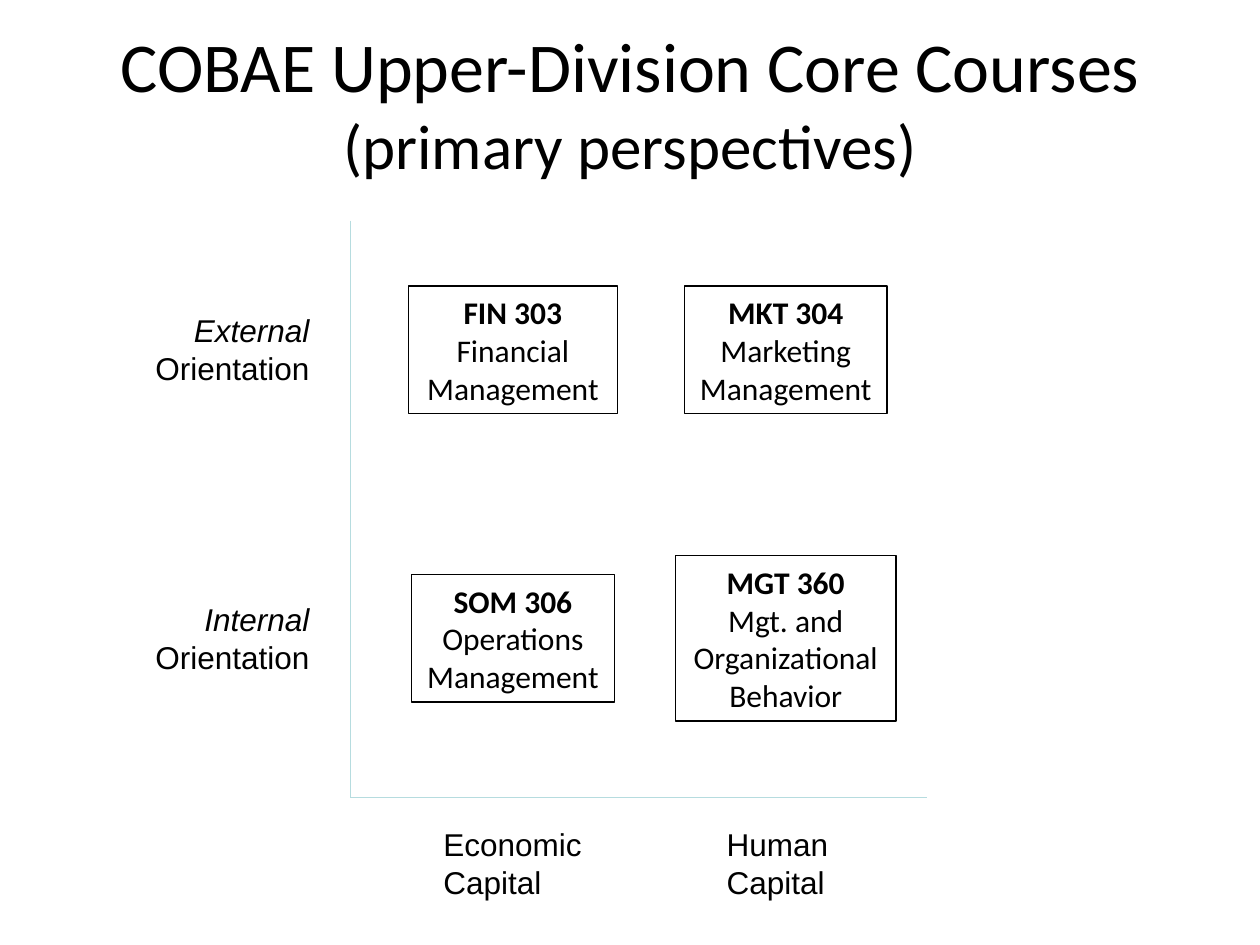
import pptx
import pptx.util
import pptx.dml.color
import pptx.enum.shapes
import pptx.enum.text
import pptx.oxml

Cm, Pt = pptx.util.Cm, pptx.util.Pt
Align = pptx.enum.text.PP_ALIGN
Anchor = pptx.enum.text.MSO_ANCHOR
Fit = pptx.enum.text.MSO_AUTO_SIZE
BLACK = pptx.dml.color.RGBColor(0, 0, 0)
TEAL = pptx.dml.color.RGBColor(0xB6, 0xDC, 0xDF)


def style(item, form):
    for key, value in form.items():
        setattr(item, key, value)


def write(shape, lines, face, align, anchor, first):
    """Fill a shape with lines; the first one takes the extra format."""
    frame = shape.text_frame
    style(frame, {"word_wrap": False, "auto_size": Fit.SHAPE_TO_FIT_TEXT,
                  "vertical_anchor": anchor})
    frame.text = "\n".join(lines)
    for num, para in enumerate(frame.paragraphs):
        para.alignment = align
        font = para.runs[0].font
        style(font, {"name": face, "size": Pt(18)})
        font.color.rgb = BLACK
        if num == 0:
            style(font, first)


deck = pptx.Presentation()
style(deck, {"slide_width": Cm(25.4), "slide_height": Cm(19.05)})
slide = deck.slides.add_slide(deck.slide_layouts[5])
shapes = slide.shapes

# Title
title = shapes.title
style(title, {"left": Cm(1.27), "top": Cm(0.76),
              "width": Cm(22.86), "height": Cm(2.62)})
style(title.text_frame, {"word_wrap": True, "auto_size": Fit.NONE,
                         "vertical_anchor": Anchor.MIDDLE})
para = title.text_frame.paragraphs[0]
para.alignment = Align.CENTER
for num, (text, size) in enumerate([("COBAE Upper-Division Core Courses", 40),
                                    ("(primary perspectives)", 36)]):
    if num:
        para.add_line_break()
    run = para.add_run()
    run.text = text
    style(run.font, {"name": "Calibri", "size": Pt(size)})
    run.font.color.rgb = BLACK

# Axes, both from the shared corner
left, base = Cm(7.06), Cm(16.08)
for ends in [(left, Cm(4.45), left, base), (left, base, Cm(18.69), base)]:
    axis = shapes.add_connector(pptx.enum.shapes.MSO_CONNECTOR.STRAIGHT, *ends)
    axis.line.color.rgb = TEAL
    axis.line.width = Pt(0.75)
    axis._element.spPr.append(pptx.oxml.parse_xml(
        '<a:effectLst xmlns:a="http://schemas.openxmlformats.org/drawingml/2006/main"/>'))

# Axis labels
cols = Cm(10.34), Cm(15.84)
rows = Cm(7.05), Cm(12.87)
tall = Cm(1.8)
for x, wide, word in [(8.69, 3.33, "Economic"), (14.4, 2.59, "Human")]:
    label = shapes.add_textbox(Cm(x), Cm(16.51), Cm(wide), tall)
    write(label, [word, "Capital"], "Arial", Align.LEFT, Anchor.TOP, {})
for y, word in zip(rows, ["External", "Internal"]):
    label = shapes.add_textbox(Cm(2.83), y - tall // 2, Cm(3.66), tall)
    write(label, [word, "Orientation"], "Arial", Align.RIGHT, Anchor.TOP,
          {"italic": True})

# Course boxes, centred on the grid
courses = [
    (0, 0, 4.22, 2.57, ["FIN 303", "Financial", "Management"]),
    (0, 1, 4.09, 2.57, ["SOM 306", "Operations", "Management"]),
    (1, 0, 4.09, 2.57, ["MKT 304", "Marketing", "Management"]),
    (1, 1, 4.45, 3.33, ["MGT 360", "Mgt. and", "Organizational", "Behavior"]),
]
for col, row, wide, high, lines in courses:
    wide, high = Cm(wide), Cm(high)
    box = shapes.add_shape(pptx.enum.shapes.MSO_SHAPE.RECTANGLE,
                           cols[col] - wide // 2, rows[row] - high // 2, wide, high)
    box.shadow.inherit = False
    box.fill.background()
    box.line.color.rgb = BLACK
    box.line.width = Pt(0.75)
    write(box, lines, "Calibri", Align.CENTER, Anchor.MIDDLE, {"bold": True})

deck.save("out.pptx")
